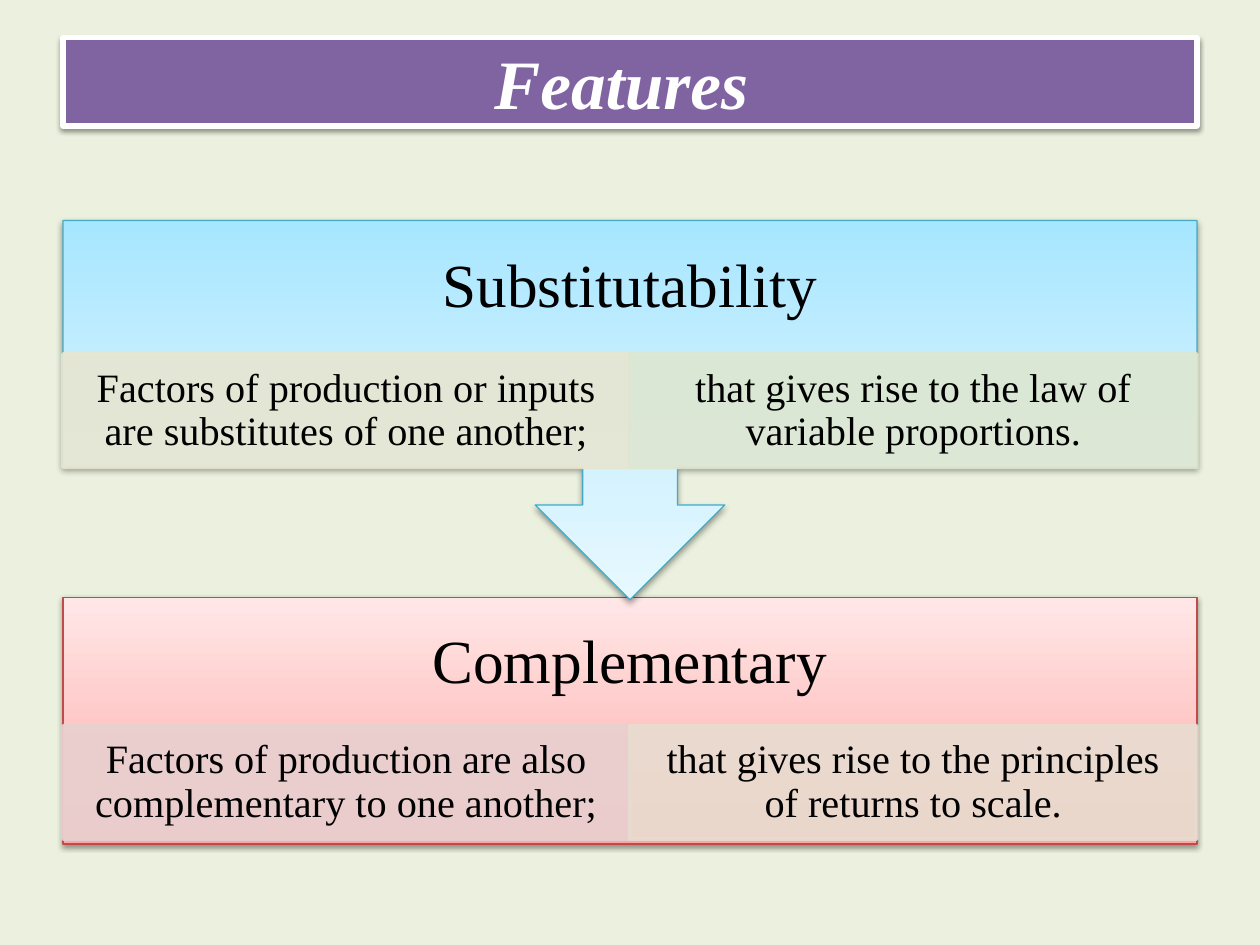
from copy import deepcopy
from dataclasses import dataclass

from lxml import etree
from pptx import Presentation
from pptx.dml.color import RGBColor
from pptx.enum import shapes, text
from pptx.oxml.ns import qn
from pptx.util import Inches, Pt

FONT = "Times New Roman"
BLACK = RGBColor(0x00, 0x00, 0x00)
WHITE = RGBColor(0xFF, 0xFF, 0xFF)
PURPLE = RGBColor(0x80, 0x64, 0xA2)
PALE_GREEN = RGBColor(0xEB, 0xF1, 0xDE)
BLUE_LINE = RGBColor(0x46, 0xAA, 0xC5)
RED_LINE = RGBColor(0xBF, 0x4C, 0x48)
BLUES = (RGBColor(0xA7, 0xE6, 0xFF), RGBColor(0xC1, 0xED, 0xFF), RGBColor(0xE7, 0xF8, 0xFF))
REDS = (RGBColor(0xFF, 0xA6, 0xA5), RGBColor(0xFF, 0xC0, 0xBF), RGBColor(0xFF, 0xE7, 0xE7))
SAND = RGBColor(0xE7, 0xE6, 0xD1)
SAGE = RGBColor(0xDE, 0xE7, 0xD1)
ROSE = RGBColor(0xE8, 0xD0, 0xD0)
PEACH = RGBColor(0xE8, 0xDC, 0xD0)

LEFT, WIDTH = 0.5, 9
HEADING_HEIGHT, CELL_HEIGHT = 1.06, 0.9
GRADIENT_POSITIONS = (0, 0.35, 1)


@dataclass(frozen=True)
class Cell:
    wording: str
    color: RGBColor


@dataclass(frozen=True)
class Feature:
    heading: str
    top: float
    height: float
    cells_top: float
    preset: shapes.MSO_SHAPE
    rotation: int
    gradient: tuple[RGBColor, ...]
    outline: RGBColor
    cells: tuple[Cell, ...]


FEATURES = (
    Feature("Complementary", 4.74, 1.96, 5.76, shapes.MSO_SHAPE.RECTANGLE, 0, REDS, RED_LINE, (
        Cell("Factors of production are also complementary to one another;", ROSE),
        Cell("that gives rise to the principles of returns to scale.", PEACH),
    )),
    Feature("Substitutability", 1.75, 3.01, 2.81, shapes.MSO_SHAPE.UP_ARROW_CALLOUT, 180,
            BLUES, BLUE_LINE, (
        Cell("Factors of production or inputs are substitutes of one another;", SAND),
        Cell("that gives rise to the law of variable proportions.", SAGE),
    )),
)


def add_box(page, preset, left: float, top: float, width: float, height: float,
            outline: RGBColor, line_width: float):
    box = page.shapes.add_shape(preset, Inches(left), Inches(top), Inches(width), Inches(height))
    box.line.color.rgb = outline
    box.line.width = Pt(line_width)
    box.shadow.inherit = False
    return box


def add_shadow(box) -> None:
    effects = box._element.spPr.find(qn("a:effectLst"))
    shadow = etree.SubElement(effects, qn("a:outerShdw"), blurRad=str(Pt(3.1)),
                              dist=str(Pt(1.6)), dir="5400000", rotWithShape="0")
    black = etree.SubElement(shadow, qn("a:srgbClr"), val=str(BLACK))
    etree.SubElement(black, qn("a:alpha"), val="38000")


def fill_gradient(box, colors: tuple[RGBColor, ...]) -> None:
    """Fill with three stops running from bottom to top."""
    box.fill.gradient()
    box.fill.gradient_angle = 90
    stop_list = box._element.spPr.find(qn("a:gradFill")).find(qn("a:gsLst"))
    stop_list.append(deepcopy(stop_list[-1]))
    for stop, color, position in zip(box.fill.gradient_stops, colors, GRADIENT_POSITIONS):
        stop.color.rgb = color
        stop.position = position


def make_translucent(box) -> None:
    """Give the fill and the outline 90 % opacity."""
    for color in box._element.spPr.iter(qn("a:srgbClr")):
        etree.SubElement(color, qn("a:alpha"), val="90000")


def write(box, wording: str, size: float, color: RGBColor = BLACK, bold: bool = False,
          inset: tuple[float, float] = (0.1, 0.05), spacing: float = 0.9) -> None:
    frame = box.text_frame
    frame.word_wrap = True
    frame.vertical_anchor = text.MSO_ANCHOR.MIDDLE
    frame.margin_left = frame.margin_right = Inches(inset[0])
    frame.margin_top = frame.margin_bottom = Inches(inset[1])
    para = frame.paragraphs[0]
    para.alignment = text.PP_ALIGN.CENTER
    para.line_spacing = spacing
    span = para.add_run()
    span.text = wording
    span.font.name = FONT
    span.font.size = Pt(size)
    span.font.bold = span.font.italic = bold
    span.font.color.rgb = color


def draw_title(page) -> None:
    banner = add_box(page, shapes.MSO_SHAPE.RECTANGLE, LEFT, 0.3, WIDTH, 0.7, WHITE, 3)
    banner.fill.solid()
    banner.fill.fore_color.rgb = PURPLE
    add_shadow(banner)
    write(banner, "Features ", 39.6, WHITE, bold=True, spacing=1.0)


def draw_feature(page, feature: Feature) -> None:
    panel = add_box(page, feature.preset, LEFT, feature.top, WIDTH, feature.height,
                    feature.outline, 0.75)
    panel.rotation = feature.rotation
    fill_gradient(panel, feature.gradient)
    add_shadow(panel)
    heading = page.shapes.add_textbox(Inches(LEFT), Inches(feature.top),
                                      Inches(WIDTH), Inches(HEADING_HEIGHT))
    write(heading, feature.heading, 35, inset=(0.27, 0.27))
    cell_width = WIDTH / len(feature.cells)
    for column, cell in enumerate(feature.cells):
        box = add_box(page, shapes.MSO_SHAPE.RECTANGLE, LEFT + column * cell_width,
                      feature.cells_top, cell_width, CELL_HEIGHT, cell.color, 2)
        box.fill.solid()
        box.fill.fore_color.rgb = cell.color
        make_translucent(box)
        write(box, cell.wording, 23, inset=(0.18, 0.03))


def main() -> None:
    deck = Presentation()
    deck.slide_width, deck.slide_height = Inches(10), Inches(7.5)
    page = deck.slides.add_slide(deck.slide_layouts[6])
    page.background.fill.solid()
    page.background.fill.fore_color.rgb = PALE_GREEN
    draw_title(page)
    for feature in FEATURES:
        draw_feature(page, feature)
    deck.save("out.pptx")


if __name__ == "__main__":
    main()
